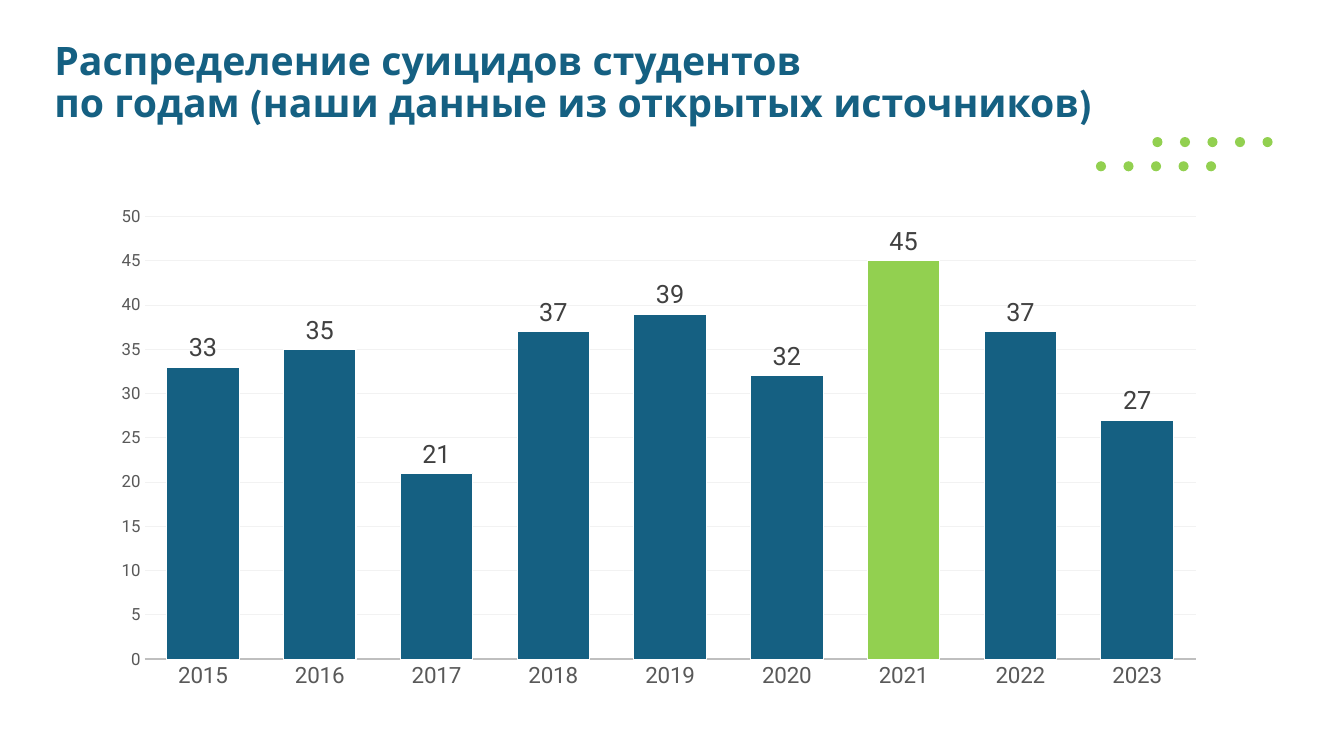
import pptx
import pptx.chart.data
import pptx.dml.color
import pptx.enum.chart
import pptx.enum.shapes
import pptx.enum.text
import pptx.oxml
import pptx.oxml.ns
import pptx.util

RGBColor = pptx.dml.color.RGBColor
BLUE = RGBColor(0x15, 0x60, 0x82)
GREEN = RGBColor(0x92, 0xD0, 0x50)
WHITE = RGBColor(0xFF, 0xFF, 0xFF)
LABEL_GREY = RGBColor(0x40, 0x40, 0x40)
AXIS_GREY = RGBColor(0x59, 0x59, 0x59)
LINE_GREY = RGBColor(0xBF, 0xBF, 0xBF)
GRID_GREY = RGBColor(0xF2, 0xF2, 0xF2)

TITLE_FONT = "League Spartan"
CHART_FONT = "Roboto"
TITLE = "Распределение суицидов студентов \vпо годам (наши данные из открытых источников)"
CASES = {2015: 33, 2016: 35, 2017: 21, 2018: 37, 2019: 39,
         2020: 32, 2021: 45, 2022: 37, 2023: 27}

# Dot rows: left and top of the first dot, in inches
DOT_ROWS = [(11.43, 1.36), (10.87, 1.6)]
DOTS_PER_ROW = 5
DOT_STEP = 0.273
DOT_SIZE = 0.1


def inches(*lengths):
    return [pptx.util.Inches(length) for length in lengths]


def set_font(font, name, size, color, bold=False):
    font.name = name
    font.size = pptx.util.Pt(size)
    font.color.rgb = color
    font.bold = bold


def set_line(line, color, width):
    line.color.rgb = color
    line.width = pptx.util.Pt(width)


def add_title(page):
    title = page.shapes.title
    title.left, title.top, title.width, title.height = inches(0.41, 0.28, 10.76, 0.84)
    frame = title.text_frame
    frame.word_wrap = True
    frame.auto_size = pptx.enum.text.MSO_AUTO_SIZE.NONE
    frame.vertical_anchor = pptx.enum.text.MSO_ANCHOR.TOP
    frame.margin_left = frame.margin_right = pptx.util.Inches(0.13)
    frame.margin_top = frame.margin_bottom = pptx.util.Inches(0.13)
    frame.text = TITLE
    para = frame.paragraphs[0]
    para.alignment = pptx.enum.text.PP_ALIGN.LEFT
    para.line_spacing = 0.9
    set_font(para.font, TITLE_FONT, 28, BLUE, bold=True)


def add_dots(page):
    group = page.shapes.add_group_shape()
    for left, top in DOT_ROWS:
        for column in range(DOTS_PER_ROW):
            dot = group.shapes.add_shape(
                pptx.enum.shapes.MSO_SHAPE.OVAL,
                *inches(left + column * DOT_STEP, top, DOT_SIZE, DOT_SIZE))
            dot.shadow.inherit = False
            dot.fill.solid()
            dot.fill.fore_color.rgb = GREEN
            dot.line.fill.background()


def style_axis(axis, size):
    axis.major_tick_mark = pptx.enum.chart.XL_TICK_MARK.NONE
    axis.minor_tick_mark = pptx.enum.chart.XL_TICK_MARK.NONE
    set_font(axis.tick_labels.font, CHART_FONT, size, AXIS_GREY)


def place_plot(chart, **shares):
    """Fix the inner plot area as shares of the chart's size."""
    area = chart.element.find(".//" + pptx.oxml.ns.qn("c:plotArea"))
    for layout in area.findall(pptx.oxml.ns.qn("c:layout")):
        area.remove(layout)
    values = "".join(f'<c:{side} val="{share}"/>' for side, share in shares.items())
    area.insert(0, pptx.oxml.parse_xml(
        f'<c:layout {pptx.oxml.ns.nsdecls("c")}><c:manualLayout>'
        '<c:layoutTarget val="inner"/><c:xMode val="edge"/><c:yMode val="edge"/>'
        f'{values}</c:manualLayout></c:layout>'))


def add_cases_chart(page):
    data = pptx.chart.data.CategoryChartData()
    data.categories = [str(year) for year in CASES]
    data.add_series("Series 1", CASES.values())
    chart = page.shapes.add_chart(
        pptx.enum.chart.XL_CHART_TYPE.COLUMN_CLUSTERED,
        *inches(0.99, 1.95, 11.09, 4.99), data).chart
    chart.has_legend = False
    chart.has_title = False
    chart.font.name = CHART_FONT
    chart.font.size = pptx.util.Pt(10)
    place_plot(chart, x=0.04, y=0.04, w=0.94, h=0.88)

    # Axes
    style_axis(chart.category_axis, 16)
    set_line(chart.category_axis.format.line, LINE_GREY, 1.25)
    values = chart.value_axis
    style_axis(values, 12)
    values.minimum_scale, values.maximum_scale, values.major_unit = 0, 50, 5
    values.format.line.fill.background()
    set_line(values.major_gridlines.format.line, GRID_GREY, 0.75)

    # Columns, with the peak year picked out
    plot = chart.plots[0]
    plot.vary_by_categories = False
    plot.gap_width = 61
    plot.overlap = 7
    series = plot.series[0]
    peak = list(CASES.values()).index(max(CASES.values()))
    for column, color in ((series, BLUE), (series.points[peak], GREEN)):
        column.format.fill.solid()
        column.format.fill.fore_color.rgb = color
        set_line(column.format.line, WHITE, 0.75)

    # Value labels
    labels = series.data_labels
    labels.show_value = True
    labels.position = pptx.enum.chart.XL_LABEL_POSITION.OUTSIDE_END
    set_font(labels.font, CHART_FONT, 18, LABEL_GREY)


def main():
    deck = pptx.Presentation()
    deck.slide_width, deck.slide_height = inches(13.33, 7.5)
    title_only = deck.slide_layouts[5]
    page = deck.slides.add_slide(title_only)
    add_title(page)
    add_dots(page)
    add_cases_chart(page)
    deck.save("out.pptx")


if __name__ == "__main__":
    main()
